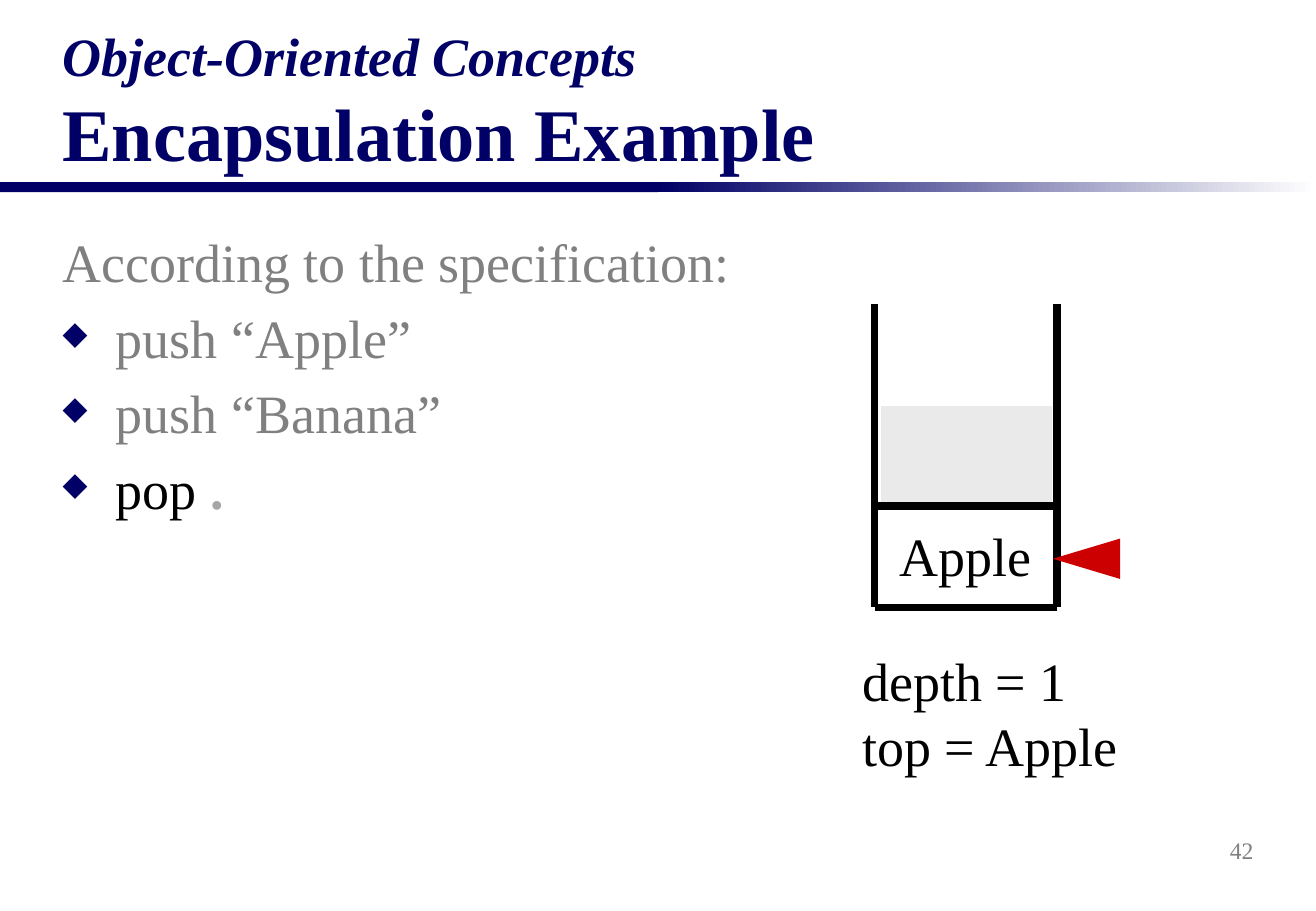
"""Builds the encapsulation example slide with its stack diagram."""
from lxml import etree
from pptx import Presentation, oxml, util as u
from pptx.dml.color import RGBColor
from pptx.enum import shapes, text

COLORS = {"navy": "000066", "grey": "808080", "pale": "A6A6A6", "black": "000000",
          "white": "FFFFFF", "popped": "EAEAEA", "red": "CC0000"}
FONT = "Times New Roman"
COLUMNS, ROWS, CELL = 130, 90, u.Inches(1 / 12)

TITLE = [[("Object-Oriented Concepts\v", {"size": 32, "italic": True}),
          ("Encapsulation Example", {"size": 44})]]
BODY = [
    [("According to the specification:", {})],
    [("push “Apple”", {})],
    [("push “Banana”", {})],
    [("pop", {"color": "black"}), (" .", {"color": "pale", "bold": True})],
]
STATE = [[("depth = 1", {})], [("top = Apple", {})]]
TOP_ITEM = [[("Apple", {})]]
PAGE_NUMBER = [[("42", {})]]

LEFT, RIGHT, RIM, FLOOR, LEVEL = 86.4, 104.4, 30, 60, 50
STACK_LINES = [(LEFT, RIM, LEFT, FLOOR), (RIGHT, RIM, RIGHT, FLOOR),
               (LEFT, FLOOR, RIGHT, FLOOR), (LEFT, LEVEL, RIGHT, LEVEL)]
POINTER = (109, 55.2, 104, 55.2)


def cells(*counts):
    return [round(count * CELL) for count in counts]


def rgb(name):
    return RGBColor.from_string(COLORS[name])


def style(font, size=None, color=None, bold=None, italic=None):
    if size:
        font.size = u.Pt(size)
    if color:
        font.color.rgb = rgb(color)
    if bold is not None:
        font.bold = bold
    if italic is not None:
        font.italic = italic


def add_bullet(para):
    props = para._p.get_or_add_pPr()
    color = etree.SubElement(props, oxml.ns.qn("a:buClr"))
    etree.SubElement(color, oxml.ns.qn("a:srgbClr"), val=COLORS["navy"])
    etree.SubElement(props, oxml.ns.qn("a:buSzPct"), val="60000")
    etree.SubElement(props, oxml.ns.qn("a:buChar"), char="◆")


def add_text(page, place, paragraphs, size=32, color="black", bold=None, wrap=True,
             anchor=text.MSO_ANCHOR.TOP, align=text.PP_ALIGN.LEFT,
             line=None, before=0, bullets_from=None):
    box = page.shapes.add_textbox(*cells(*place))
    frame = box.text_frame
    frame.word_wrap = wrap
    frame.vertical_anchor = anchor
    for index, spans in enumerate(paragraphs):
        para = frame.paragraphs[0] if index == 0 else frame.add_paragraph()
        if bullets_from is not None and index >= bullets_from:
            add_bullet(para)
            props = para._p.get_or_add_pPr()
            props.set("marL", str(u.Inches(0.44)))
            props.set("indent", str(-u.Inches(0.44)))
        para.alignment = align
        if line:
            para.line_spacing = u.Pt(line)
        if index:
            para.space_before = u.Pt(before)
        para.font.name = FONT
        style(para.font, size, color, bold)
        for words, changes in spans:
            pieces = words.split("\v")
            for number, piece in enumerate(pieces):
                if number:
                    para.add_line_break()
                if piece:
                    span = para.add_run()
                    span.text = piece
                    style(span.font, **changes)


def add_box(page, place):
    box = page.shapes.add_shape(shapes.MSO_SHAPE.RECTANGLE, *cells(*place))
    box.shadow.inherit = False
    box.line.fill.background()
    return box


def add_line(page, ends, color, width):
    line = page.shapes.add_connector(shapes.MSO_CONNECTOR.STRAIGHT, *cells(*ends))
    line.line.color.rgb = rgb(color)
    line.line.width = u.Pt(width)
    etree.SubElement(line._element.spPr, oxml.ns.qn("a:effectLst"))
    return line


def main():
    deck = Presentation()
    deck.slide_width, deck.slide_height = cells(COLUMNS, ROWS)
    page = deck.slides.add_slide(deck.slide_layouts[6])

    half = COLUMNS / 2
    solid_bar = add_box(page, (0, 18, half, 1))
    solid_bar.fill.solid()
    solid_bar.fill.fore_color.rgb = rgb("navy")
    fading_bar = add_box(page, (half, 18, half, 1))
    fading_bar.fill.gradient()
    fading_bar.fill.gradient_angle = 0
    for stop, color, position in zip(fading_bar.fill.gradient_stops, ("navy", "white"), (0, 1)):
        stop.color.rgb = rgb(color)
        stop.position = position

    add_text(page, (98, 81, 27, 6), PAGE_NUMBER, size=14, color="grey",
             anchor=text.MSO_ANCHOR.MIDDLE, align=text.PP_ALIGN.RIGHT)
    add_text(page, (5, 3.5, 120, 14.5), TITLE, size=44, color="navy", bold=True,
             anchor=text.MSO_ANCHOR.BOTTOM)
    add_text(page, (5, 22, 120, 65), BODY, color="grey", line=38.4, before=6.4, bullets_from=1)

    popped = add_box(page, (87, 40, 17, 10))
    popped.fill.solid()
    popped.fill.fore_color.rgb = rgb("popped")
    popped.line.color.rgb = rgb("white")
    popped.line.width = u.Pt(1)
    for ends in STACK_LINES:
        add_line(page, ends, "black", 4.5)

    add_text(page, (84, 63.4, 28, 14), STATE, wrap=False, line=38.4)
    pointer = add_line(page, POINTER, "red", 8)
    etree.SubElement(pointer.line._get_or_add_ln(), oxml.ns.qn("a:tailEnd"),
                     type="triangle", w="med", len="lg")
    add_text(page, (87.7, 51, 15.5, 7.6), TOP_ITEM, wrap=False, line=38.4)

    deck.save("out.pptx")


if __name__ == "__main__":
    main()
